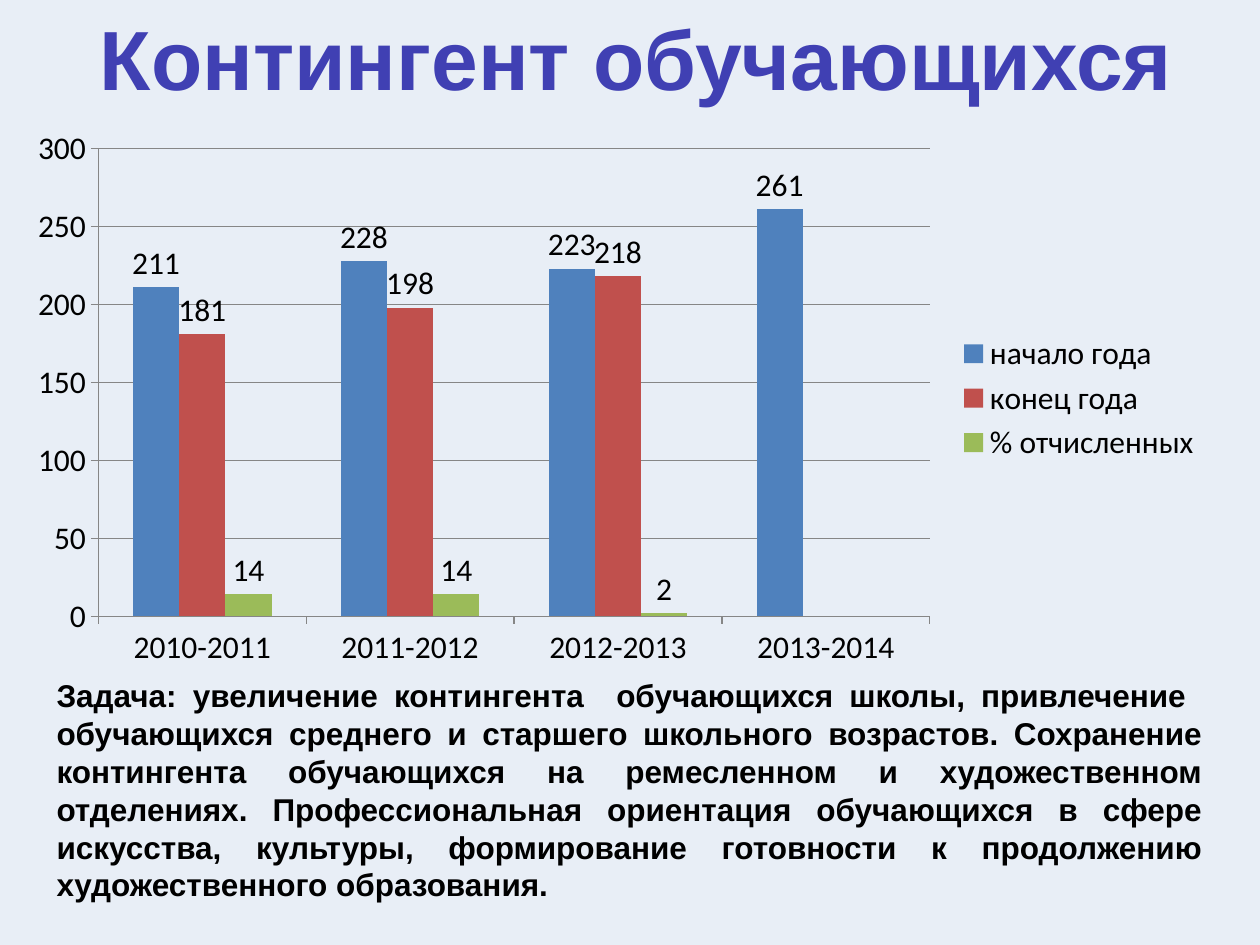
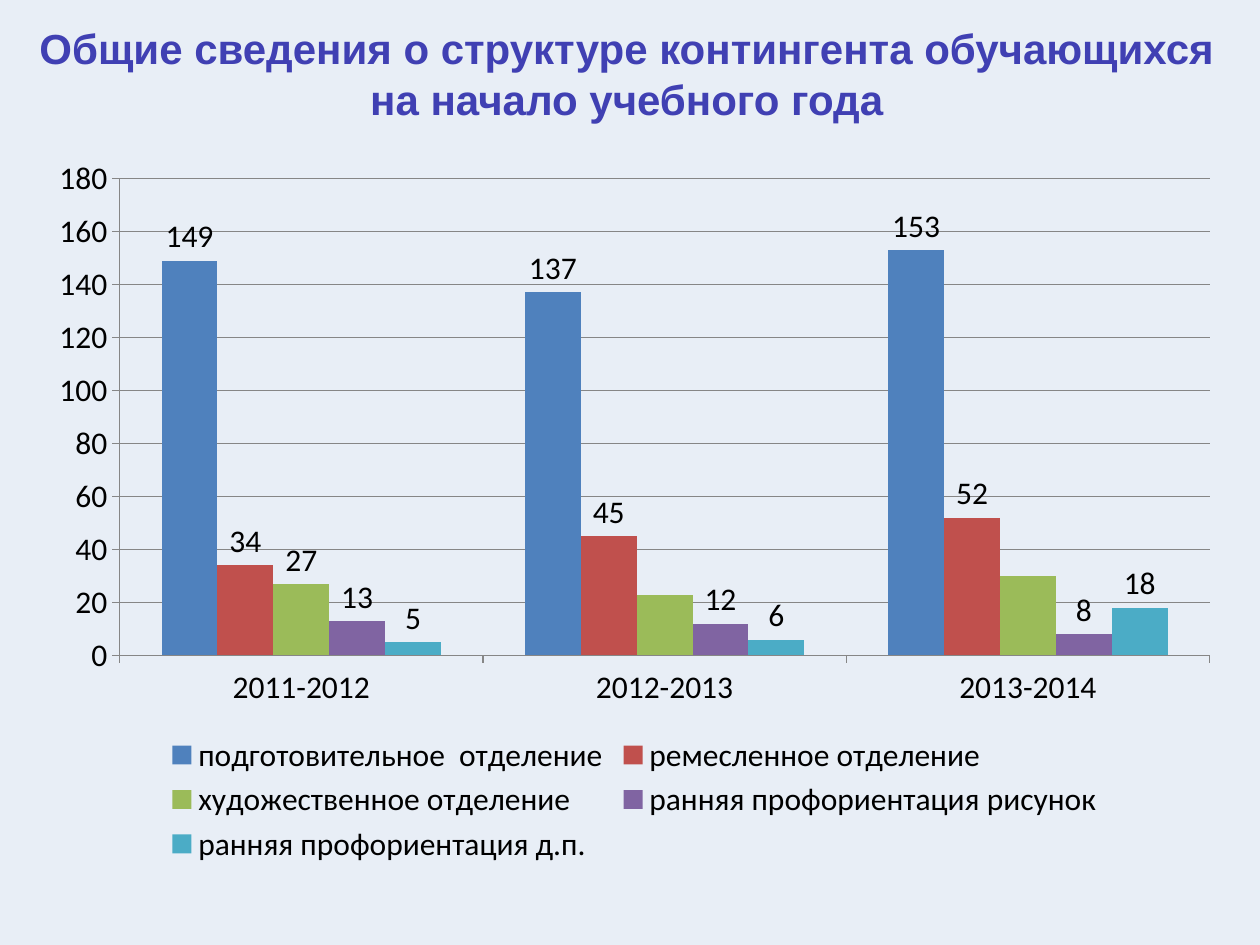
from pptx import Presentation, util as u
from pptx.chart.data import CategoryChartData
from pptx.dml.color import RGBColor
from pptx.enum import chart as ch, text

Pt = u.Pt
COLORS = {
    "background": "E8EEF6", "title": "4040B3", "text": "000000", "axis": "868686",
    "blue": "4F81BD", "red": "C0504D", "green": "9BBB59",
    "purple": "8064A2", "aqua": "4BACC6",
}
SERIES_COLORS = ["blue", "red", "green", "purple", "aqua"]
HEADING = {"name": "Arial", "bold": True}
CHART_FONT = {"name": "Calibri", "size": Pt(18), "bold": False}

TASK = (
    "Задача: увеличение контингента  обучающихся школы, привлечение  "
    "обучающихся среднего и старшего школьного возрастов. Сохранение "
    "контингента обучающихся на ремесленном и художественном отделениях. "
    "Профессиональная ориентация обучающихся в сфере искусства, культуры, "
    "формирование готовности к продолжению художественного образования."
)


def color(name):
    return RGBColor.from_string(COLORS[name])


def apply(target, values):
    for name, value in values.items():
        setattr(target, name, value)


def format_font(font, values, color_name="text"):
    apply(font, values)
    font.color.rgb = color(color_name)


def add_slide(presentation):
    slide = presentation.slides.add_slide(presentation.slide_layouts[6])
    slide.background.fill.solid()
    slide.background.fill.fore_color.rgb = color("background")
    return slide


def add_text(slide, box, lines, size, color_name, alignment, wrap):
    frame = slide.shapes.add_textbox(*map(Pt, box)).text_frame
    apply(frame, {"word_wrap": wrap, "auto_size": text.MSO_AUTO_SIZE.SHAPE_TO_FIT_TEXT})
    for index, line in enumerate(lines):
        paragraph = frame.add_paragraph() if index else frame.paragraphs[0]
        paragraph.alignment = alignment
        run = paragraph.add_run()
        run.text = line
        format_font(run.font, {**HEADING, "size": Pt(size)}, color_name)


def add_title(slide, box, lines, size):
    add_text(slide, box, lines, size, "title", text.PP_ALIGN.CENTER, False)


def format_line(line):
    line.color.rgb = color("axis")
    line.width = Pt(0.75)


def format_axes(chart, maximum, step):
    for axis in (chart.category_axis, chart.value_axis):
        apply(axis, {"major_tick_mark": ch.XL_TICK_MARK.OUTSIDE,
                     "minor_tick_mark": ch.XL_TICK_MARK.NONE})
        format_line(axis.format.line)
    apply(chart.value_axis, {"minimum_scale": 0, "maximum_scale": maximum,
                             "major_unit": step, "has_major_gridlines": True})
    format_line(chart.value_axis.major_gridlines.format.line)


def label_series(series, labelled_points):
    """Label every point, or only the listed ones when a list is given."""
    labels = series.data_labels
    labels.show_value = labelled_points is None
    labels.position = ch.XL_LABEL_POSITION.OUTSIDE_END
    format_font(labels.font, CHART_FONT)
    for index in labelled_points or []:
        label = series.points[index].data_label
        label.position = ch.XL_LABEL_POSITION.OUTSIDE_END
        format_font(label.font, CHART_FONT)


def add_column_chart(slide, box, categories, values, maximum, step, legend_position,
                     partly_labelled=None):
    """partly_labelled maps a series name to the points that carry a label."""
    data = CategoryChartData()
    data.categories = categories
    for name, numbers in values.items():
        data.add_series(name, numbers)
    chart = slide.shapes.add_chart(
        ch.XL_CHART_TYPE.COLUMN_CLUSTERED, *map(Pt, box), data).chart
    apply(chart, {"has_title": False, "has_legend": True})
    format_font(chart.font, CHART_FONT)
    apply(chart.legend, {"position": legend_position, "include_in_layout": False})
    format_axes(chart, maximum, step)
    plot = chart.plots[0]
    apply(plot, {"gap_width": 150, "overlap": 0, "vary_by_categories": False})
    for series, color_name in zip(plot.series, SERIES_COLORS):
        series.invert_if_negative = False
        series.format.fill.solid()
        series.format.fill.fore_color.rgb = color(color_name)
        label_series(series, (partly_labelled or {}).get(series.name))


def add_enrolment_slide(presentation):
    slide = add_slide(presentation)
    add_title(slide, (46.8, 0, 633.6, 65.5), ["Контингент обучающихся"], 48)
    add_text(slide, (25.2, 383, 669, 138), [TASK], 18, "text",
             text.PP_ALIGN.JUSTIFY, True)
    add_column_chart(
        slide, (8, 67.7, 686, 319.7),
        ["2010-2011", "2011-2012", "2012-2013", "2013-2014"],
        {"начало года": (211, 228, 223, 261),
         "конец года": (181, 198, 218, None),
         "% отчисленных": (14, 14, 2, None)},
        300, 50, ch.XL_LEGEND_POSITION.RIGHT)


def add_structure_slide(presentation):
    slide = add_slide(presentation)
    add_title(slide, (12.2, 9.4, 692, 65.5),
              ["Общие сведения о структуре контингента обучающихся",
               "на начало учебного года"], 24)
    add_column_chart(
        slide, (20.2, 82.8, 684.7, 414),
        ["2011-2012", "2012-2013", "2013-2014"],
        {"подготовительное  отделение": (149, 137, 153),
         "ремесленное отделение": (34, 45, 52),
         "художественное отделение": (27, 23, 30),
         "ранняя профориентация рисунок": (13, 12, 8),
         "ранняя профориентация д.п.": (5, 6, 18)},
        180, 20, ch.XL_LEGEND_POSITION.BOTTOM,
        {"художественное отделение": [0]})


def main():
    presentation = Presentation()
    apply(presentation, {"slide_width": Pt(720), "slide_height": Pt(540)})
    add_enrolment_slide(presentation)
    add_structure_slide(presentation)
    presentation.save("out.pptx")


if __name__ == "__main__":
    main()
